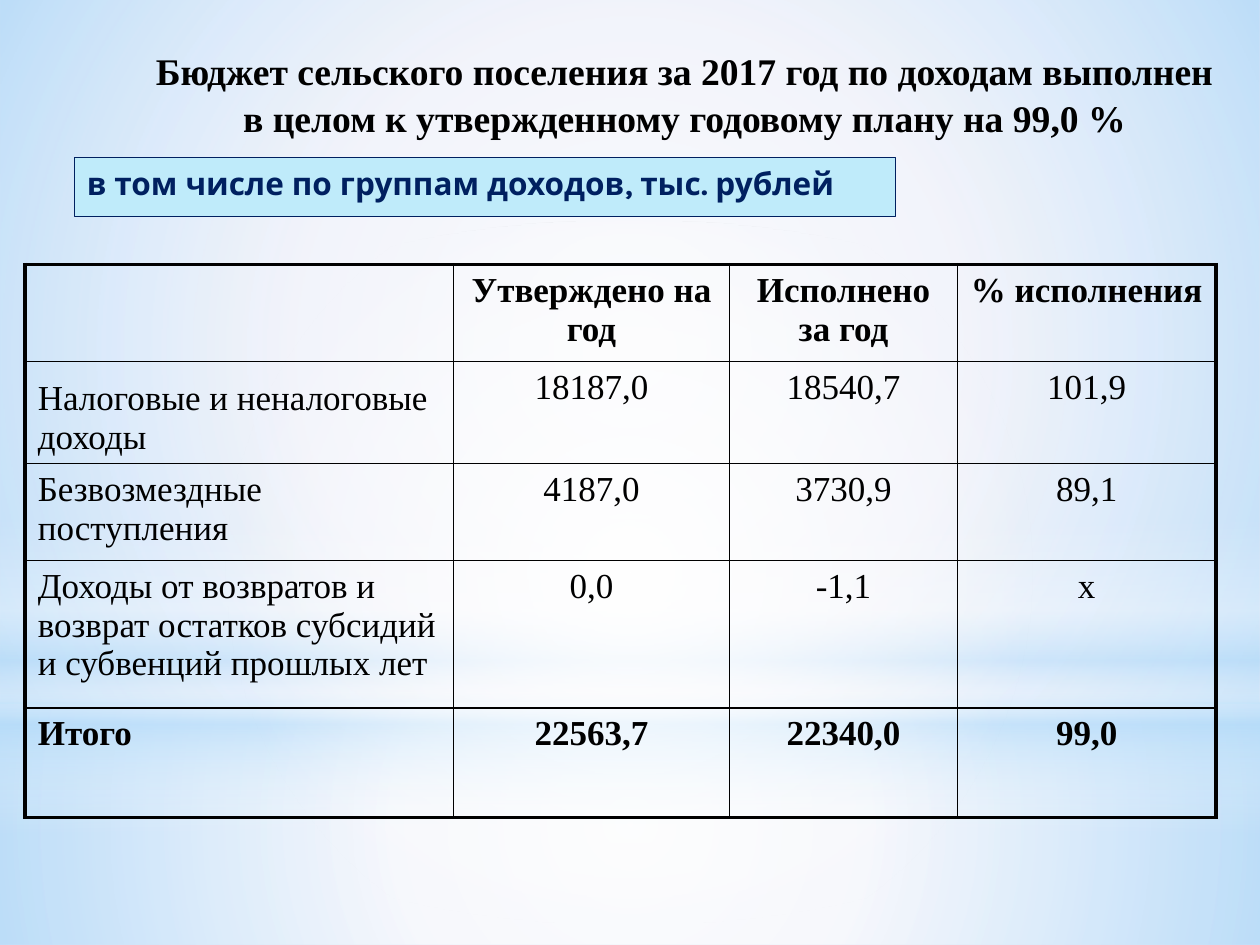
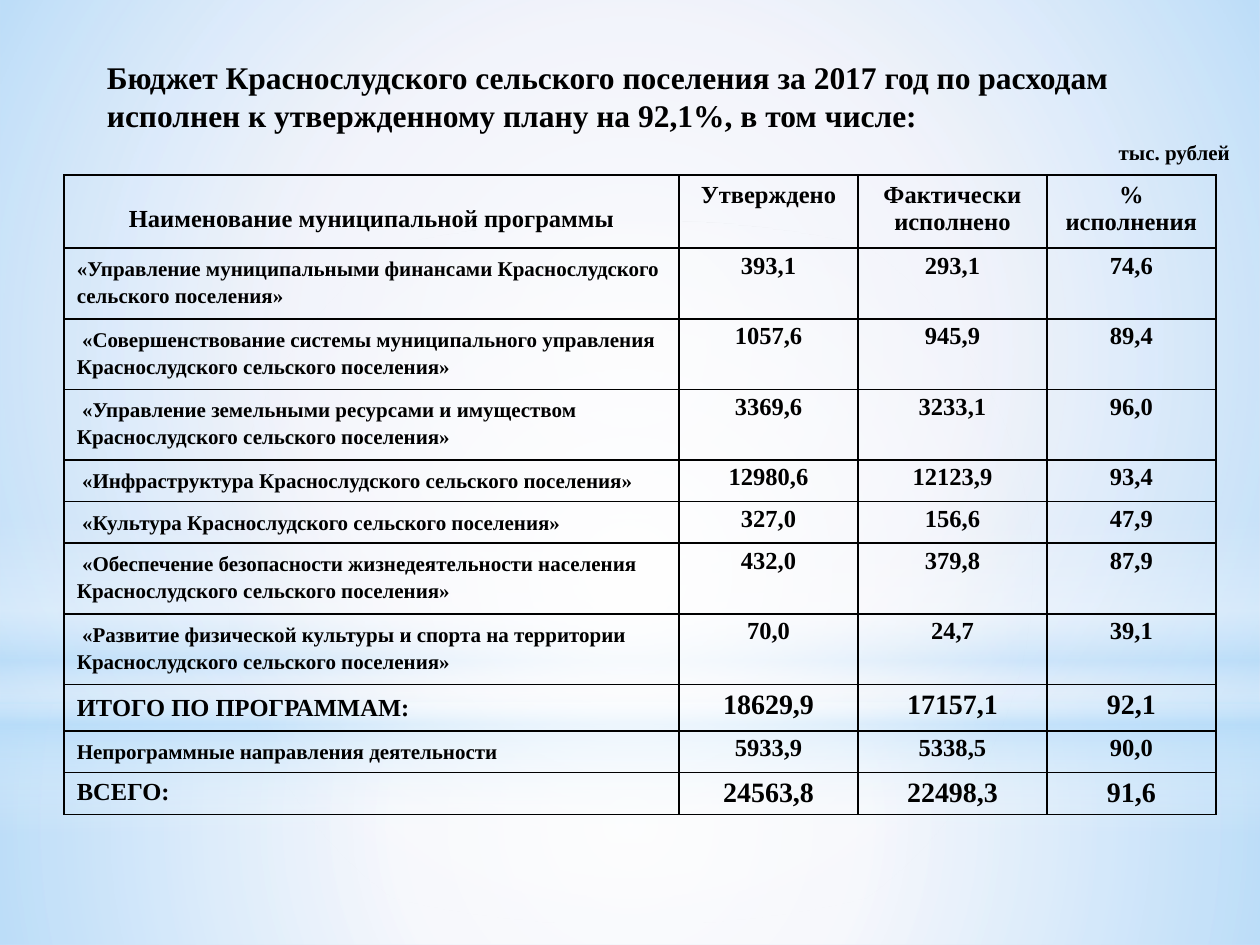
"""Build two slides on the income and spending of a rural settlement budget."""
from dataclasses import dataclass

import lxml.etree
import pptx
import pptx.dml.color
import pptx.enum.shapes
import pptx.enum.text
import pptx.oxml.ns
import pptx.util

Inches = pptx.util.Inches
Pt = pptx.util.Pt
qn = pptx.oxml.ns.qn
Align = pptx.enum.text.PP_ALIGN
Anchor = pptx.enum.text.MSO_ANCHOR
Preset = pptx.enum.shapes.MSO_SHAPE

SERIF, SANS = "Times New Roman", "Karla"
BLACK, WHITE, SKY = "000000", "FFFFFF", "B4DCFA"
NAVY, PALE_BLUE, BACKDROP = "002060", "BFEBFA", "DCE1F4"
THIN, THICK = 1, 2.25


@dataclass(frozen=True)
class Glow:
    """A translucent gradient shape; stops are position, colour, opacity in percent."""
    preset: Preset
    top: float
    height: float
    stops: tuple
    radial: bool = True


@dataclass(frozen=True)
class Row:
    """A table row with its height, cell texts and text sizes."""
    height: float
    texts: tuple
    label_size: float = 12
    value_size: float = 14
    bold: bool = True
    label_anchor: Anchor = Anchor.TOP


GLOWS = (
    Glow(Preset.RECTANGLE, 5.58, 1.92, ((0, WHITE, 91), (37, WHITE, 76), (100, SKY, 79))),
    Glow(Preset.RECTANGLE, 0, 5.58, ((0, WHITE, 89), (48, WHITE, 62), (100, SKY, 79))),
    Glow(Preset.RECTANGLE, 4.12, 2.5, ((0, WHITE, 0), (29, WHITE, 30), (45, SKY, 40),
                                       (55, WHITE, 26), (65, SKY, 60), (100, WHITE, 0)), False),
    Glow(Preset.OVAL, 1.75, 5.58, ((0, WHITE, 100), (56, WHITE, 0))),
)

INCOME_COLUMNS = (3.4, 2.19, 1.81, 2.05)
INCOME_ROWS = (
    Row(0.77, ("", "Утверждено на год", "Исполнено за год", "% исполнения"), 20, 20),
    Row(0.81, ("Налоговые и неналоговые доходы", "18187,0", "18540,7", "101,9"),
        20, 20, False, Anchor.BOTTOM),
    Row(0.77, ("Безвозмездные поступления", "4187,0", "3730,9", "89,1"), 20, 20, False),
    Row(1.17, ("Доходы от возвратов и возврат остатков субсидий и субвенций прошлых лет",
               "0,0", "-1,1", "х"), 20, 20, False),
    Row(0.87, ("Итого", "22563,7", "22340,0", "99,0"), 20, 20),
)

SPENDING_COLUMNS = (4.88, 1.42, 1.5, 1.34)
SPENDING_ROWS = (
    Row(0.58, ("Наименование муниципальной программы", "Утверждено",
               "Фактически исполнено", "% исполнения"), 14),
    Row(0.56, ("«Управление муниципальными финансами Краснослудского сельского поселения»",
               "393,1", "293,1", "74,6")),
    Row(0.56, (" «Совершенствование системы муниципального управления "
               "Краснослудского сельского поселения»", "1057,6", "945,9", "89,4")),
    Row(0.56, (" «Управление земельными ресурсами и имуществом "
               "Краснослудского сельского поселения»", "3369,6", "3233,1", "96,0")),
    Row(0.33, (" «Инфраструктура Краснослудского сельского поселения»",
               "12980,6", "12123,9", "93,4")),
    Row(0.33, (" «Культура Краснослудского сельского поселения»", "327,0", "156,6", "47,9")),
    Row(0.56, (" «Обеспечение безопасности жизнедеятельности населения "
               "Краснослудского сельского поселения»", "432,0", "379,8", "87,9")),
    Row(0.56, (" «Развитие физической культуры и спорта на территории "
               "Краснослудского сельского поселения»", "70,0", "24,7", "39,1")),
    Row(0.37, ("ИТОГО ПО ПРОГРАММАМ:", "18629,9", "17157,1", "92,1"), 14, 16),
    Row(0.33, ("Непрограммные направления деятельности", "5933,9", "5338,5", "90,0")),
    Row(0.33, ("ВСЕГО:", "24563,8", "22498,3", "91,6"), 14, 16),
)


def rgb(value: str):
    """Turn a hex string into a colour."""
    return pptx.dml.color.RGBColor.from_string(value)


def write(frame, text: str, *, size: float, font: str = SERIF, colour: str = BLACK,
          bold: bool = True, align=Align.LEFT, spacing: float = 1.0) -> None:
    """Put one formatted paragraph into a text frame."""
    para = frame.paragraphs[0]
    para.alignment = align
    para.line_spacing = spacing
    span = para.add_run()
    span.text = text
    span.font.size = Pt(size)
    span.font.name = font
    span.font.bold = bold
    span.font.color.rgb = rgb(colour)


def add_solid(parent, colour: str, opacity: float = 100) -> None:
    """Append a hex colour with an opacity to an XML element."""
    node = lxml.etree.SubElement(parent, qn("a:srgbClr"), val=colour)
    if opacity < 100:
        lxml.etree.SubElement(node, qn("a:alpha"), val=str(opacity * 1000))


def add_glow(page, glow: Glow) -> None:
    """Draw one full-width gradient shape."""
    shape = page.shapes.add_shape(glow.preset, 0, Inches(glow.top), Inches(10), Inches(glow.height))
    shape.shadow.inherit = False
    shape.line.fill.background()
    shape.fill.background()
    gradient = lxml.etree.Element(qn("a:gradFill"), rotWithShape="1")
    stops = lxml.etree.SubElement(gradient, qn("a:gsLst"))
    for position, colour, opacity in glow.stops:
        add_solid(lxml.etree.SubElement(stops, qn("a:gs"), pos=str(position * 1000)),
                  colour, opacity)
    if glow.radial:
        route = lxml.etree.SubElement(gradient, qn("a:path"), path="circle")
        lxml.etree.SubElement(route, qn("a:fillToRect"), l="50000", t="50000", r="50000", b="50000")
    else:
        lxml.etree.SubElement(gradient, qn("a:lin"), ang="5400000", scaled="0")
    properties = shape._element.spPr
    properties.replace(properties.find(qn("a:noFill")), gradient)


def add_page(deck):
    """Add a blank slide with the shared backdrop."""
    page = deck.slides.add_slide(deck.slide_layouts[6])
    page.background.fill.solid()
    page.background.fill.fore_color.rgb = rgb(BACKDROP)
    for glow in GLOWS:
        add_glow(page, glow)
    return page


def add_box(page, left: float, top: float, width: float, height: float, text: str, *,
            wrap: bool = True, anchor=Anchor.TOP, inset: float = 0.1, **style) -> None:
    """Add a text box with one paragraph."""
    box = page.shapes.add_textbox(Inches(left), Inches(top), Inches(width), Inches(height))
    frame = box.text_frame
    frame.word_wrap = wrap
    frame.vertical_anchor = anchor
    frame.margin_left = frame.margin_right = Inches(inset)
    write(frame, text, **style)


def set_borders(cell, **widths: float) -> None:
    """Give a cell black borders, with a width for each of L, R, T and B."""
    properties = cell._tc.get_or_add_tcPr()
    for index, side in enumerate("LRTB"):
        line = lxml.etree.Element(qn(f"a:ln{side}"), w=str(Pt(widths[side])))
        add_solid(lxml.etree.SubElement(line, qn("a:solidFill")), BLACK)
        properties.insert(index, line)


def add_table(page, left: float, top: float, columns: tuple, rows: tuple, *,
              frame_width: float = THIN, body_spacing: float = 1.0,
              tight_values: bool = False):
    """Draw a table of labels and centred values and return it."""
    table = page.shapes.add_table(len(rows), len(columns), Inches(left), Inches(top),
                                  Inches(sum(columns)),
                                  Inches(sum(row.height for row in rows))).table
    table.first_row = table.horz_banding = False
    for column, width in zip(table.columns, columns):
        column.width = Inches(width)
    last_row, last_column = len(rows) - 1, len(columns) - 1
    for i, row in enumerate(rows):
        table.rows[i].height = Inches(row.height)
        for j, text in enumerate(row.texts):
            cell = table.cell(i, j)
            cell.fill.background()
            set_borders(cell, L=THIN if j else frame_width, T=THIN if i else frame_width,
                        R=THIN if j < last_column else frame_width,
                        B=THIN if i < last_row else frame_width)
            if j == 0:
                cell.vertical_anchor = row.label_anchor
            elif i and tight_values:
                cell.margin_left = cell.margin_right = Inches(0.07)
                cell.margin_top = cell.margin_bottom = 0
            if text:
                write(cell.text_frame, text, bold=row.bold,
                      size=row.value_size if j else row.label_size,
                      align=Align.CENTER if i == 0 or j else Align.LEFT,
                      spacing=body_spacing if i else 1.0)
    return table


def build_income(deck) -> None:
    """Build the slide on budget income."""
    page = add_page(deck)
    add_box(page, 1.02, 0.31, 8.83, 0.82,
            "Бюджет сельского поселения за 2017 год по доходам выполнен "
            "в целом к утвержденному годовому плану на 99,0 %",
            size=21.5, align=Align.CENTER, spacing=1.05, inset=0.17)
    banner = page.shapes.add_shape(Preset.RECTANGLE, Inches(0.59), Inches(1.25),
                                   Inches(6.52), Inches(0.47))
    banner.shadow.inherit = False
    banner.fill.solid()
    banner.fill.fore_color.rgb = rgb(PALE_BLUE)
    banner.line.color.rgb = rgb(NAVY)
    banner.line.width = Pt(0.75)
    banner.text_frame.word_wrap = True
    banner.text_frame.vertical_anchor = Anchor.TOP
    write(banner.text_frame, "в том числе по группам доходов, тыс. рублей",
          size=18, font=SANS, colour=NAVY)
    add_table(page, 0.2, 2.1, INCOME_COLUMNS, INCOME_ROWS, frame_width=THICK)


def build_spending(deck) -> None:
    """Build the slide on budget spending by programme."""
    page = add_page(deck)
    add_box(page, 0.75, 0.37, 9.25, 0.78,
            "Бюджет Краснослудского сельского поселения за 2017 год по расходам "
            "исполнен к утвержденному плану на 92,1%, в том числе:",
            size=18, anchor=Anchor.MIDDLE)
    add_box(page, 8.78, 1.06, 1.09, 0.3, "тыс. рублей", size=12, wrap=False)
    table = add_table(page, 0.51, 1.39, SPENDING_COLUMNS, SPENDING_ROWS,
                      body_spacing=1.15, tight_values=True)
    table.cell(0, 0).margin_top = Inches(0.24)
    table.cell(len(SPENDING_ROWS) - 1, 0).text_frame.paragraphs[0].line_spacing = 1.0


def main() -> None:
    """Build and save the deck."""
    deck = pptx.Presentation()
    deck.slide_width, deck.slide_height = Inches(10), Inches(7.5)
    build_income(deck)
    build_spending(deck)
    deck.save("out.pptx")


if __name__ == "__main__":
    main()
